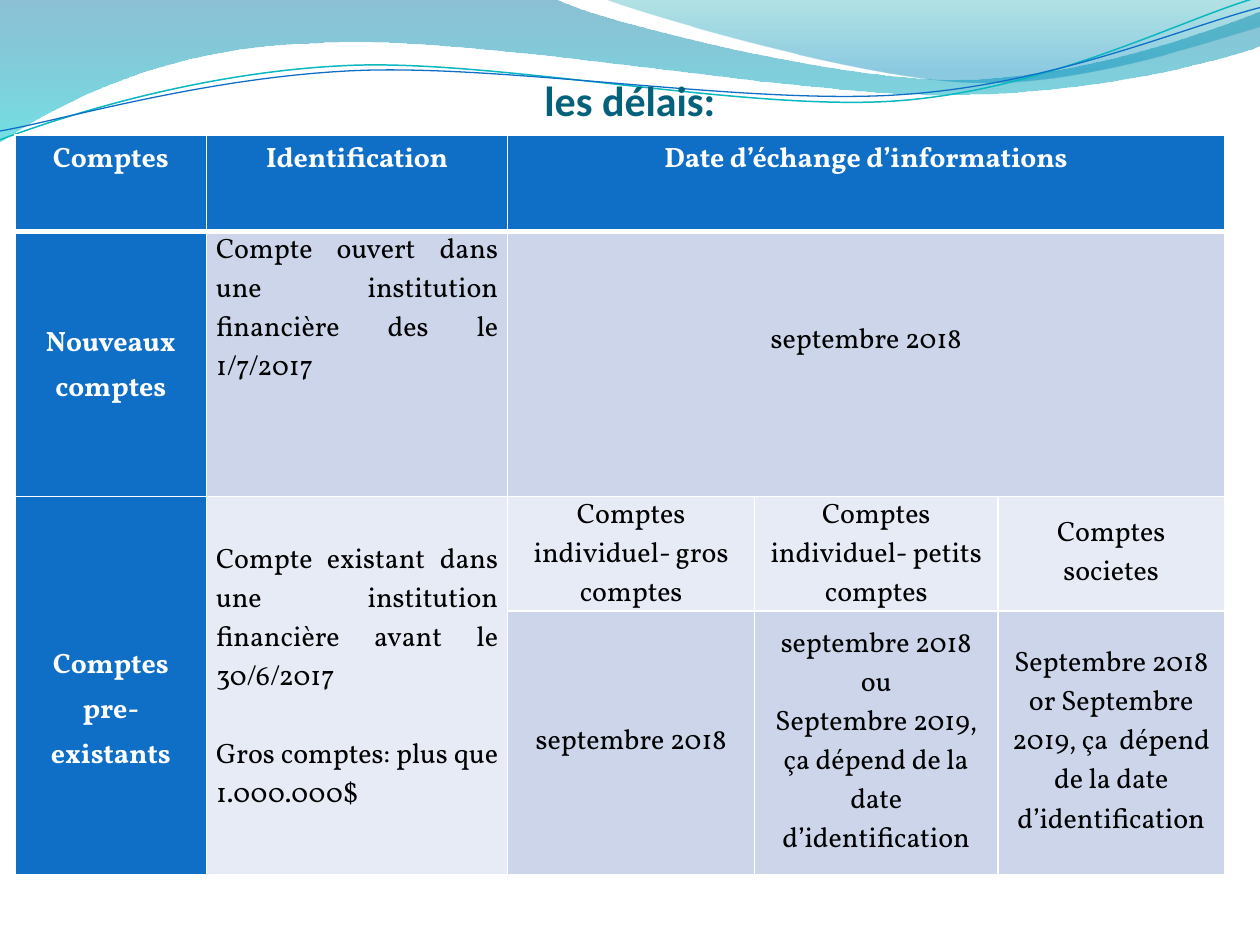
"""Build a slide with a wave header and a table of information exchange deadlines."""
from math import cos, radians, sin

from lxml import etree
from pptx import Presentation
from pptx.dml.color import RGBColor
from pptx.enum.text import MSO_ANCHOR, PP_ALIGN
from pptx.oxml.ns import qn
from pptx.util import Inches, Pt

TOP, MIDDLE, BOTTOM = MSO_ANCHOR.TOP, MSO_ANCHOR.MIDDLE, MSO_ANCHOR.BOTTOM
CENTER, JUSTIFY = PP_ALIGN.CENTER, PP_ALIGN.JUSTIFY

THEME = {
    "title": {"name": "Calibri", "size": Pt(24), "bold": True, "color": "04617B"},
    "label": {"name": "Vollkorn", "size": Pt(16), "bold": True, "color": "FFFFFF"},
    "body": {"name": "Vollkorn", "size": Pt(16), "bold": False, "color": "000000"},
    "blue": "0F6FC6",
    "dark band": "CCD5EA",
    "light band": "E7EBF5",
    "border": "FFFFFF",
    "border width": 1,
    "header border width": 3,
}

WAVES = [
    {"box": (-0.01, -0.01, 10.02, 1.14), "start": (0, 0),
     "segments": [[(4.4, -0.01)],
                  [(4.76, 0.17), (6.64, 0.63), (7.58, 0.63)],
                  [(8.53, 0.63), (9.58, 0.26), (10, 0.09)],
                  [(10.01, 0.36)],
                  [(9.83, 0.44), (8.7, 0.76), (7.46, 0.75)],
                  [(6.22, 0.75), (3.82, 0.28), (2.57, 0.34)],
                  [(1.29, 0.36), (0.46, 0.83), (-0.01, 1.13)],
                  [(0, 0)]],
     "gradient": [(0, "0074A1", 45), (1, "00C6CF", 55)]},
    {"box": (4.79, -0.01, 5.21, 0.7), "start": (4.79, -0.01),
     "segments": [[(5.09, 0.11), (6.82, 0.62), (7.69, 0.65)],
                  [(8.56, 0.69), (9.61, 0.32), (10, 0.21)],
                  [(10, 0)],
                  [(4.79, -0.01)]],
     "gradient": [(0, "00A1A9", 30), (0.8, "008BBF", 45)]},
    {"box": (-0.02, 0.22, 10.02, 0.71), "start": (0, 1.11), "rotation": -2.7,
     "segments": [[(0.48, 0.93), (1.58, 0.57), (2.77, 0.52)],
                  [(3.95, 0.47), (5.93, 0.89), (7.13, 0.8)],
                  [(8.33, 0.71), (9.38, 0.15), (9.98, -0.02)]],
     "line": ("0AB8BF", 0.85)},
    {"box": (-0.02, 0.3, 10.03, 0.58), "start": (0, 1.04), "rotation": -2.7,
     "segments": [[(0.47, 0.96), (1.64, 0.61), (2.83, 0.56)],
                  [(4.03, 0.51), (5.97, 0.84), (7.17, 0.75)],
                  [(8.36, 0.67), (9.41, 0.21), (10, 0.06)]],
     "line": ("0F6FC6", 0.75)},
]

TITLE = "les délais:"
COLUMN_WIDTHS = [1.52, 2.39, 1.96, 1.93, 1.8]
ROW_HEIGHTS = [0.77, 2.1, 0.91, 2.09]

HEADER = {"fill": "blue", "font": "label", "anchor": TOP, "spacing": 1.15}
LABEL = {**HEADER, "anchor": MIDDLE}
DARK = {"fill": "dark band", "font": "body", "anchor": MIDDLE, "spacing": 1}
LIGHT = {**DARK, "fill": "light band"}
DEFINITION = {"anchor": TOP, "align": JUSTIFY, "gap": 22}

CELLS = [
    (0, 0, ["Comptes"], HEADER),
    (0, 1, ["Identification"], HEADER),
    (0, 2, ["Date d’échange d’informations"], {**HEADER, "columns": 3}),
    (1, 0, ["Nouveaux comptes"], LABEL),
    (1, 1, ["Compte ouvert dans une institution financière des le 1/7/2017"],
     {**DARK, **DEFINITION}),
    (1, 2, ["septembre 2018"], {**DARK, "columns": 3, "bottom": 0.36}),
    (2, 0, ["Comptes pre-existants"], {**LABEL, "rows": 2, "top": 0.36}),
    (2, 1, ["Compte existant dans une institution financière avant le 30/6/2017",
            "Gros comptes: plus que 1.000.000$"],
     {**LIGHT, **DEFINITION, "rows": 2, "top": 0.36}),
    (2, 2, ["Comptes individuel- gros comptes"], LIGHT),
    (2, 3, ["Comptes individuel- petits comptes"], LIGHT),
    (2, 4, ["Comptes societes"], LIGHT),
    (3, 2, ["septembre 2018"], DARK),
    (3, 3, ["septembre 2018 ou",
            "Septembre 2019, ça dépend de la date d’identification"], DARK),
    (3, 4, ["Septembre 2018 or Septembre",
            "2019, ça  dépend de la date d’identification"], DARK),
]


def set_values(target, values):
    for name, value in values.items():
        setattr(target, name, value)


def add_path_step(path, tag, points, box, rotation):
    left, top, width, height = box
    angle = radians(-rotation)
    step = etree.SubElement(path, qn(f"a:{tag}"))
    for x, y in points:
        across, down = x - left - width / 2, y - top - height / 2
        local_x = across * cos(angle) - down * sin(angle) + width / 2
        local_y = across * sin(angle) + down * cos(angle) + height / 2
        etree.SubElement(step, qn("a:pt"), x=str(Inches(local_x)), y=str(Inches(local_y)))


def add_wave(slide, wave):
    box, rotation = wave["box"], wave.get("rotation", 0)
    left, top, width, height = map(Inches, box)
    builder = slide.shapes.build_freeform(left, top)
    builder.add_line_segments([(left + width, top + height)], close=False)
    shape = builder.convert_to_shape()
    shape.rotation = rotation
    shape.shadow.inherit = False
    path = next(shape.element.iter(qn("a:path")))
    for step in list(path):
        path.remove(step)
    add_path_step(path, "moveTo", [wave["start"]], box, rotation)
    for points in wave["segments"]:
        add_path_step(path, "lnTo" if len(points) == 1 else "cubicBezTo", points, box, rotation)
    if "line" in wave:
        color, weight = wave["line"]
        shape.fill.background()
        shape.line.color.rgb = RGBColor.from_string(color)
        shape.line.width = Pt(weight)
        return
    etree.SubElement(path, qn("a:close"))
    shape.line.fill.background()
    shape.fill.gradient()
    shape.fill.gradient_angle = 270
    for stop, (position, color, _) in zip(shape.fill.gradient_stops, wave["gradient"]):
        stop.position = position
        stop.color.rgb = RGBColor.from_string(color)
    for element, (_, _, opacity) in zip(shape.element.iter(qn("a:srgbClr")), wave["gradient"]):
        etree.SubElement(element, qn("a:alpha"), val=str(opacity * 1000))


def write(text_frame, texts, font, align=CENTER, spacing=1, gap=0):
    text_frame.word_wrap = True
    for index, text in enumerate(texts):
        paragraph = text_frame.paragraphs[0] if index == 0 else text_frame.add_paragraph()
        set_values(paragraph, {"alignment": align, "line_spacing": spacing,
                               "space_before": Pt(gap if index else 0)})
        run = paragraph.add_run()
        run.text = text
        set_values(run.font, {name: value for name, value in THEME[font].items() if name != "color"})
        run.font.color.rgb = RGBColor.from_string(THEME[font]["color"])


def add_borders(cell, row):
    properties = cell._tc.get_or_add_tcPr()
    thick_side = {0: "lnB", 1: "lnT"}.get(row)
    for side in ("lnL", "lnR", "lnT", "lnB"):
        width = THEME["header border width" if side == thick_side else "border width"]
        line = etree.SubElement(properties, qn(f"a:{side}"), w=str(Pt(width)))
        fill = etree.SubElement(line, qn("a:solidFill"))
        etree.SubElement(fill, qn("a:srgbClr"), val=THEME["border"])


def add_title(slide):
    shape = slide.shapes.add_textbox(Inches(0.5), Inches(0.54), Inches(9), Inches(0.45))
    set_values(shape.text_frame, {"vertical_anchor": BOTTOM, "margin_left": 0, "margin_right": 0,
                                  "margin_top": Inches(0.05), "margin_bottom": 0})
    write(shape.text_frame, [TITLE], "title")


def add_deadlines(slide):
    frame = slide.shapes.add_table(len(ROW_HEIGHTS), len(COLUMN_WIDTHS), Inches(0.12), Inches(1.07),
                                   Inches(sum(COLUMN_WIDTHS)), Inches(sum(ROW_HEIGHTS)))
    table = frame.table
    for column, width in zip(table.columns, COLUMN_WIDTHS):
        column.width = Inches(width)
    for index, (row, height) in enumerate(zip(table.rows, ROW_HEIGHTS)):
        row.height = Inches(height)
        for cell in row.cells:
            add_borders(cell, index)
    for row, column, texts, style in CELLS:
        cell = table.cell(row, column)
        last_row = row + style.get("rows", 1) - 1
        last_column = column + style.get("columns", 1) - 1
        if (last_row, last_column) != (row, column):
            cell.merge(table.cell(last_row, last_column))
        set_values(cell, {"vertical_anchor": style["anchor"],
                          "margin_left": Pt(5.4), "margin_right": Pt(5.4),
                          "margin_top": Inches(style.get("top", 0)),
                          "margin_bottom": Inches(style.get("bottom", 0))})
        cell.fill.solid()
        cell.fill.fore_color.rgb = RGBColor.from_string(THEME[style["fill"]])
        write(cell.text_frame, texts, style["font"], style.get("align", CENTER),
              style["spacing"], style.get("gap", 0))


def main():
    presentation = Presentation()
    set_values(presentation, {"slide_width": Inches(10), "slide_height": Inches(7.5)})
    slide = presentation.slides.add_slide(presentation.slide_layouts[6])
    for wave in WAVES:
        add_wave(slide, wave)
    add_title(slide)
    add_deadlines(slide)
    presentation.save("out.pptx")


if __name__ == "__main__":
    main()
